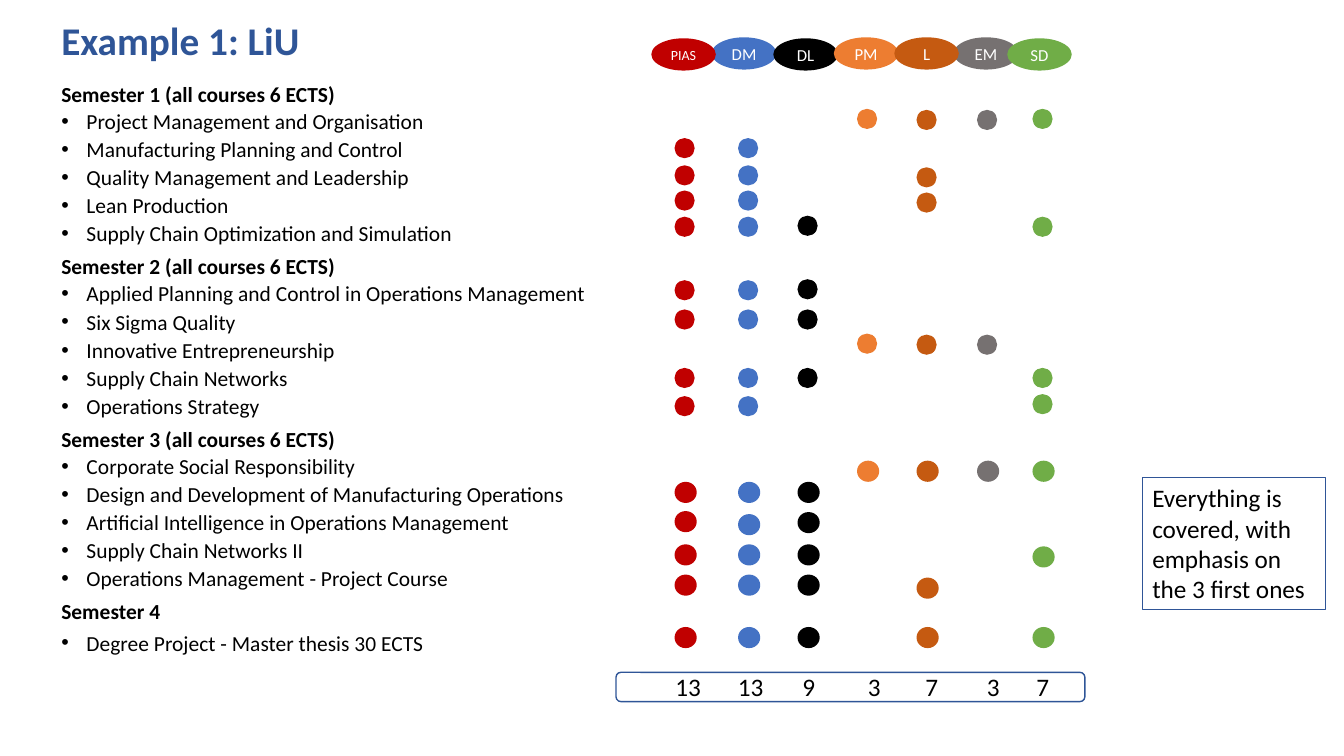
from collections import namedtuple

from lxml import etree
from pptx import Presentation
from pptx.dml.color import RGBColor
from pptx.enum.shapes import MSO_SHAPE
from pptx.enum.text import MSO_ANCHOR, PP_ALIGN
from pptx.oxml.ns import qn
from pptx.util import Inches, Pt

OVAL, RECTANGLE = MSO_SHAPE.OVAL, MSO_SHAPE.RECTANGLE
ROUNDED = MSO_SHAPE.ROUNDED_RECTANGLE
MIDDLE, TOP = MSO_ANCHOR.MIDDLE, MSO_ANCHOR.TOP
LEFT, CENTER = PP_ALIGN.LEFT, PP_ALIGN.CENTER
FONT = "Calibri"
BLACK, WHITE, NAVY = "000000", "FFFFFF", "2F5597"

Skill = namedtuple("Skill", "color badge_left badge_top size dot_left total total_left")
# Ordered back to front, because neighbouring badges overlap
SKILLS = {
    "DM": Skill("4472C4", 7.06, 0.37, 12, 7.32, "13", 7.22),
    "DL": Skill("000000", 7.67, 0.38, 12, 7.91, "9", 7.86),
    "EM": Skill("767171", 9.46, 0.37, 12, 9.69, "3", 9.69),
    "SD": Skill("70AD47", 9.99, 0.38, 12, 10.24, "7", 10.18),
    "PM": Skill("ED7D31", 8.27, 0.37, 12, 8.5, "3", 8.51),
    "L": Skill("C55A11", 8.87, 0.37, 12, 9.09, "7", 9.08),
    "PIAS": Skill("C00000", 6.46, 0.38, 10, 6.69, "13", 6.6),
}

# Each course lists the skills it covers and the top of each dot
SEMESTERS = [
    ("Semester 1 (all courses 6 ECTS)", (0.2, 0.2), [
        ("Project Management and Organisation", {"PM": 1.08, "L": 1.09, "EM": 1.09, "SD": 1.08}),
        ("Manufacturing Planning and Control", {"PIAS": 1.37, "DM": 1.37}),
        ("Quality Management and Leadership", {"PIAS": 1.64, "DM": 1.64, "L": 1.66}),
        ("Lean Production", {"PIAS": 1.89, "DM": 1.89, "L": 1.91}),
        ("Supply Chain Optimization and Simulation",
         {"PIAS": 2.15, "DM": 2.15, "DL": 2.14, "SD": 2.15}),
    ]),
    ("Semester 2 (all courses 6 ECTS)", (0.2, 0.2), [
        ("Applied Planning and Control in Operations Management",
         {"PIAS": 2.78, "DM": 2.78, "DL": 2.77}),
        ("Six Sigma Quality", {"PIAS": 3.07, "DM": 3.07, "DL": 3.07}),
        ("Innovative Entrepreneurship", {"PM": 3.31, "L": 3.32, "EM": 3.32}),
        ("Supply Chain Networks", {"PIAS": 3.65, "DM": 3.65, "DL": 3.65, "SD": 3.65}),
        ("Operations Strategy", {"PIAS": 3.93, "DM": 3.93, "SD": 3.91}),
    ]),
    ("Semester 3 (all courses 6 ECTS)", (0.22, 0.21), [
        ("Corporate Social Responsibility", {"PM": 4.57, "L": 4.57, "EM": 4.57, "SD": 4.57}),
        ("Design and Development of Manufacturing Operations",
         {"PIAS": 4.78, "DM": 4.78, "DL": 4.78}),
        ("Artificial Intelligence in Operations Management",
         {"PIAS": 5.07, "DM": 5.1, "DL": 5.08}),
        ("Supply Chain Networks II", {"PIAS": 5.4, "DM": 5.4, "DL": 5.4, "SD": 5.42}),
        ("Operations Management - Project Course",
         {"PIAS": 5.7, "DM": 5.7, "DL": 5.7, "L": 5.73}),
    ]),
    ("Semester 4", (0.22, 0.21), [
        ("Degree Project - Master thesis 30 ECTS",
         {"PIAS": 6.22, "DM": 6.22, "DL": 6.22, "L": 6.22, "SD": 6.22}),
    ]),
]


def rgb(color):
    return RGBColor.from_string(color)


def write(paragraph, text, size, color=BLACK, bold=False):
    run = paragraph.add_run()
    run.text = text
    run.font.name = FONT
    run.font.size = Pt(size)
    run.font.bold = bold
    run.font.color.rgb = rgb(color)


def add_text_box(slide, box, wrap=True, anchor=TOP):
    frame = slide.shapes.add_textbox(*map(Inches, box)).text_frame
    frame.word_wrap = wrap
    frame.vertical_anchor = anchor
    return frame


def add_plain_shape(slide, kind, box, fill=None, line=None, line_width=1):
    shape = slide.shapes.add_shape(kind, *map(Inches, box))
    shape.shadow.inherit = False
    if fill:
        shape.fill.solid()
        shape.fill.fore_color.rgb = rgb(fill)
    else:
        shape.fill.background()
    if line:
        shape.line.color.rgb = rgb(line)
        shape.line.width = Pt(line_width)
    else:
        shape.line.fill.background()
    return shape


def add_bullet(paragraph):
    properties = paragraph._p.get_or_add_pPr()
    properties.set("marL", str(Inches(0.25)))
    properties.set("indent", str(-Inches(0.25)))
    etree.SubElement(properties, qn("a:buFont")).set("typeface", "Arial")
    etree.SubElement(properties, qn("a:buChar")).set("char", "•")


def add_title(slide, box):
    paragraph = add_text_box(slide, box, anchor=MIDDLE).paragraphs[0]
    paragraph.line_spacing = 0.9
    write(paragraph, "Example 1: LiU", 28, NAVY, bold=True)


def add_course_list(slide, box):
    frame = add_text_box(slide, box)
    for number, (heading, _, courses) in enumerate(SEMESTERS):
        paragraph = frame.add_paragraph() if number else frame.paragraphs[0]
        paragraph.line_spacing = 0.7
        if number:
            paragraph.space_before = Pt(10)
        write(paragraph, heading, 15.3, bold=True)
        for course, _ in courses:
            paragraph = frame.add_paragraph()
            add_bullet(paragraph)
            alone = len(courses) == 1
            paragraph.line_spacing = 0.7 if alone else 1.0
            paragraph.space_before = Pt(10 if alone else 1.7)
            write(paragraph, course, 15.3)


def add_skill_badges(slide):
    for name, skill in SKILLS.items():
        box = (skill.badge_left, skill.badge_top, 0.64, 0.32)
        frame = add_plain_shape(slide, OVAL, box, skill.color).text_frame
        frame.margin_left = frame.margin_right = 0
        frame.margin_top = frame.margin_bottom = 0
        frame.word_wrap = False
        frame.vertical_anchor = MIDDLE
        frame.paragraphs[0].alignment = CENTER
        write(frame.paragraphs[0], name, skill.size, WHITE)


def add_skill_dots(slide):
    for _, dot_size, courses in SEMESTERS:
        for _, dots in courses:
            for name, top in dots.items():
                skill = SKILLS[name]
                add_plain_shape(slide, OVAL, (skill.dot_left, top, *dot_size), skill.color)


def add_totals(slide, box):
    top = box[1] - 0.06
    for skill in SKILLS.values():
        width = 0.33 if len(skill.total) == 1 else 0.46
        frame = add_text_box(slide, (skill.total_left, top, width, 0.4), wrap=False)
        write(frame.paragraphs[0], skill.total, 18)
    add_plain_shape(slide, ROUNDED, box, line=NAVY)


def add_conclusion(slide, box):
    frame = add_plain_shape(slide, RECTANGLE, box, line=NAVY, line_width=0.75).text_frame
    frame.word_wrap = True
    frame.vertical_anchor = TOP
    frame.paragraphs[0].alignment = LEFT
    write(frame.paragraphs[0], "Everything is covered, with emphasis on the 3 first ones", 18)


def main():
    presentation = Presentation()
    presentation.slide_width = Inches(13.33)
    presentation.slide_height = Inches(7.5)
    slide = presentation.slides.add_slide(presentation.slide_layouts[6])
    add_title(slide, (0.51, 0.09, 3.84, 0.66))
    add_course_list(slide, (0.51, 0.82, 6.9, 5.99))
    add_skill_badges(slide)
    add_skill_dots(slide)
    add_totals(slide, (6.11, 6.67, 4.65, 0.29))
    add_conclusion(slide, (11.33, 4.74, 1.82, 1.31))
    presentation.save("out.pptx")


if __name__ == "__main__":
    main()
